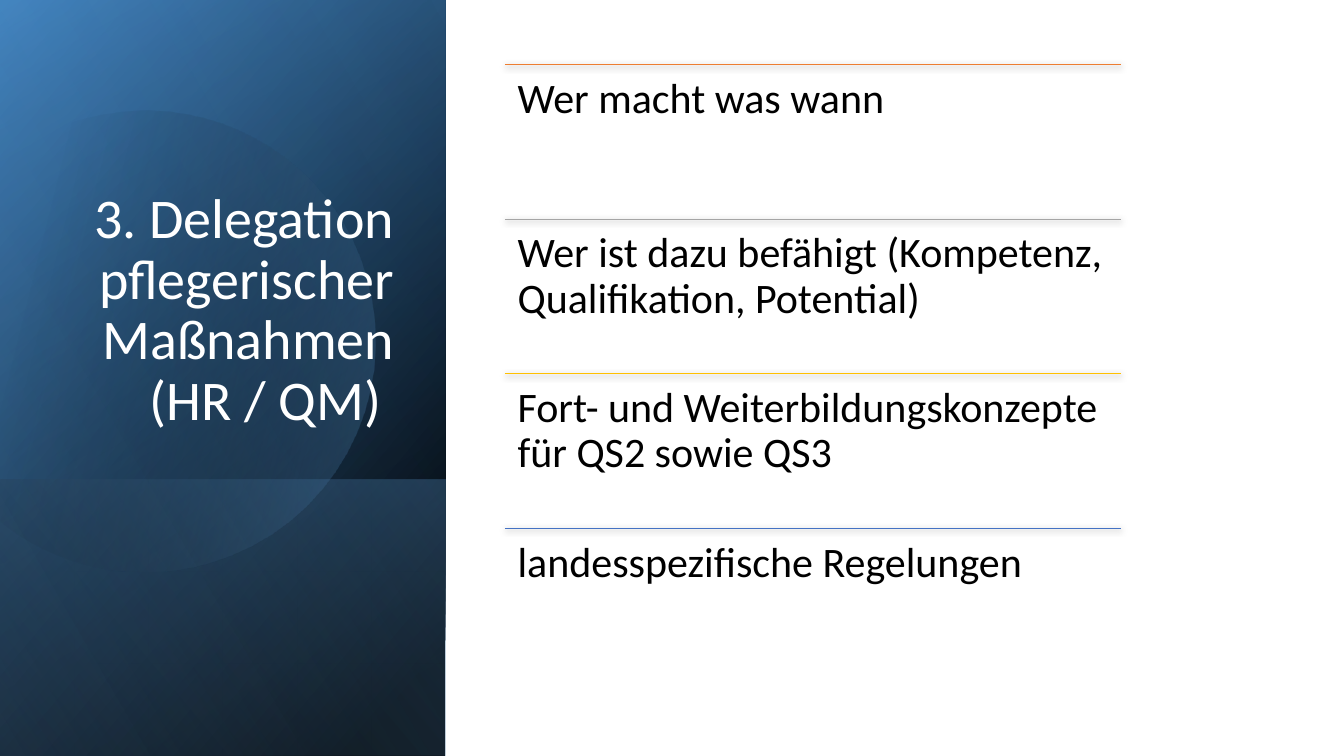
from math import cos, radians, sin
from lxml.etree import SubElement
from pptx import Presentation
from pptx.dml.color import RGBColor
from pptx.enum.shapes import MSO_CONNECTOR as CONNECTOR, MSO_SHAPE as SHAPE
from pptx.enum.text import MSO_ANCHOR as ANCHOR, MSO_AUTO_SIZE as AUTO_SIZE, PP_ALIGN as ALIGN
from pptx.oxml.ns import qn
from pptx.util import Pt


def rgb(value):
    return RGBColor.from_string(value)


def paint_gradient(part, stops, angle):
    part.shadow.inherit = False
    part.line.fill.background()
    part.fill.gradient()
    part.fill.gradient_angle = 360 - angle
    for stop, (position, color, opacity) in zip(part.fill.gradient_stops, stops):
        stop.position = position / 100
        stop.color.rgb = rgb(color)
        if opacity < 100:
            for node in part.element.spPr.iter(qn("a:gs")):
                if node.get("pos") == str(position * 1000):
                    SubElement(node[0], qn("a:alpha"), val=str(opacity * 1000))


presentation = Presentation()
presentation.slide_width, presentation.slide_height = Pt(960), Pt(540)
slide = presentation.slides.add_slide(presentation.slide_layouts[5])
shapes = slide.shapes

# left, top, width, height, stops, angle
panels = [
    (-110.88, 110.88, 540, [(8, "000000", 100), (100, "2E75B6", 100)], 50),
    (-110.88, 110.88, 540, [(0, "000000", 0), (99, "5B9BD5", 46)], 30),
    (60.48, 282.24, 197.28, [(2, "5B9BD5", 29), (100, "000000", 30)], 130),
    (-110.88, 110.88, 540, [(0, "000000", 0), (99, "9DC3E6", 11)], 120),
]
disc_start = (1.49, 1.1)
disc_curves = [
    [(2.46, 1.12), (3.35, 1.77), (3.63, 2.75)],
    [(3.98, 3.97), (3.28, 5.23), (2.07, 5.58)],
    [(1.31, 5.8), (0.53, 5.61), (-0.03, 5.14)],
    [(-0.15, 5.03)],
    [(-0.15, 1.75)],
    [(0, 1.61)],
    [(0.23, 1.42), (0.5, 1.28), (0.8, 1.19)],
    [(1.03, 1.13), (1.26, 1.1), (1.49, 1.1)],
]
disc_outline = [disc_start]
for curve in disc_curves:
    if len(curve) == 1:
        disc_outline += curve
        continue
    knots = [disc_outline[-1]] + curve
    for step in range(1, 17):
        t = step / 16
        weights = ((1 - t) ** 3, 3 * t * (1 - t) ** 2, 3 * t * t * (1 - t), t ** 3)
        disc_outline.append(tuple(sum(w * knot[axis] for w, knot in zip(weights, knots)) for axis in (0, 1)))

disc_x, disc_y, tilt = 1.585, 3.345, radians(16.1)
upright_outline = [
    (
        Pt(72 * (disc_x + (x - disc_x) * cos(tilt) - (y - disc_y) * sin(tilt))),
        Pt(72 * (disc_y + (x - disc_x) * sin(tilt) + (y - disc_y) * cos(tilt))),
    )
    for x, y in disc_outline
]

for index, (left, top, width, stops, angle) in enumerate(panels):
    if index == 3:
        builder = shapes.build_freeform(*upright_outline[0])
        builder.add_line_segments(upright_outline[1:], close=True)
        disc = builder.convert_to_shape()
        disc.rotation = 343.9
        paint_gradient(disc, [(29, "000000", 0), (100, "5B9BD5", 43)], 30)
    panel = shapes.add_shape(SHAPE.RECTANGLE, Pt(left), Pt(top), Pt(width), Pt(318.24))
    panel.rotation = 90
    panel.element.spPr.get_or_add_xfrm().set("flipH", "1")
    paint_gradient(panel, stops, angle)

title = shapes.title
shapes.element.append(title.element)
title.left, title.top, title.width, title.height = Pt(36.72), Pt(46.08), Pt(252), Pt(266.4)
title.text_frame.text = "3. Delegation pflegerischer Maßnahmen (HR / QM) "
title.text_frame.vertical_anchor = ANCHOR.BOTTOM
title.text_frame.paragraphs[0].alignment = ALIGN.RIGHT
text_styles = [(title, 40, "FFFFFF")]

topics = [
    ("Wer macht was wann", "ED7D31"),
    ("Wer ist dazu befähigt (Kompetenz, Qualifikation, Potential)", "A5A5A5"),
    ("Fort- und Weiterbildungskonzepte für QS2 sowie QS3", "FFC000"),
    ("landesspezifische Regelungen", "4472C4"),
]
topic_left, topic_width, topic_height = 360.72, 439.92, 110.4
for row, (wording, color) in enumerate(topics):
    top = Pt(46.08 + row * topic_height)
    rule = shapes.add_connector(CONNECTOR.STRAIGHT, Pt(topic_left), top, Pt(topic_left + topic_width), top)
    rule.line.color.rgb = rgb(color)
    rule.line.width = Pt(0.5)
    effects = SubElement(rule.element.spPr, qn("a:effectLst"))
    shadow = SubElement(effects, qn("a:outerShdw"), blurRad=str(Pt(4.5)), dist=str(Pt(1.5)),
                        dir="5400000", algn="ctr", rotWithShape="0")
    shade = SubElement(shadow, qn("a:srgbClr"), val="000000")
    SubElement(shade, qn("a:alpha"), val="63000")

    topic = shapes.add_textbox(Pt(topic_left), top, Pt(topic_width), Pt(topic_height))
    frame = topic.text_frame
    frame.text = wording
    frame.margin_left = frame.margin_right = frame.margin_top = frame.margin_bottom = Pt(9)
    text_styles.append((topic, 30, "000000"))

for part, size, color in text_styles:
    part.text_frame.word_wrap = True
    part.text_frame.auto_size = AUTO_SIZE.NONE
    paragraph = part.text_frame.paragraphs[0]
    paragraph.line_spacing = 0.9
    font = paragraph.runs[0].font
    font.name, font.size = "Calibri", Pt(size)
    font.color.rgb = rgb(color)

presentation.save("out.pptx")
